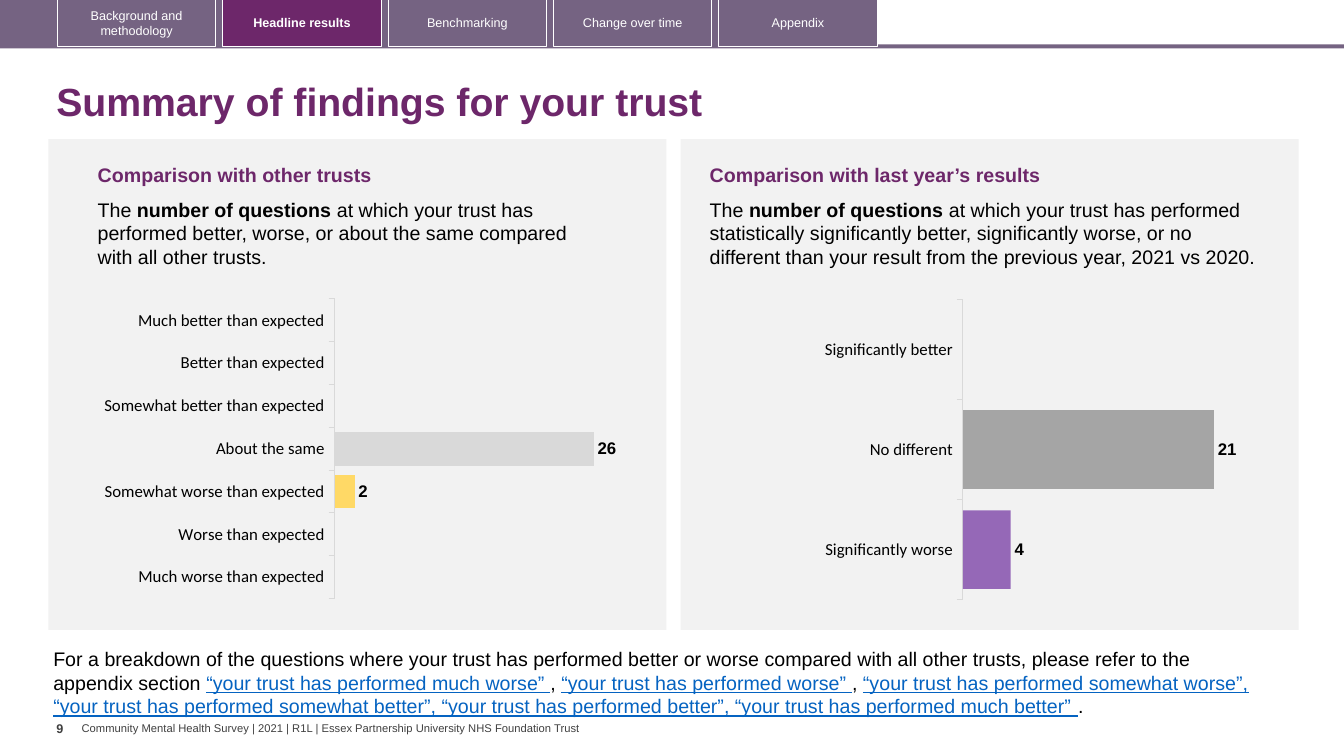
from lxml import etree
from pptx import Presentation
from pptx.chart.data import CategoryChartData
from pptx.dml.color import RGBColor
from pptx.enum.chart import XL_CHART_TYPE, XL_LABEL_POSITION, XL_TICK_MARK
from pptx.enum.shapes import MSO_SHAPE
from pptx.enum.text import MSO_ANCHOR, PP_ALIGN
from pptx.oxml import parse_xml
from pptx.oxml.ns import qn
from pptx.util import Inches, Pt

RECTANGLE = MSO_SHAPE.RECTANGLE
BAR = XL_CHART_TYPE.BAR_CLUSTERED
OUTSIDE_END = XL_LABEL_POSITION.OUTSIDE_END
TICK_OUT = XL_TICK_MARK.OUTSIDE
CENTER, LEFT = PP_ALIGN.CENTER, PP_ALIGN.LEFT
MIDDLE, TOP = MSO_ANCHOR.MIDDLE, MSO_ANCHOR.TOP
CHART_NS = "http://schemas.openxmlformats.org/drawingml/2006/chart"

PURPLE, MAUVE, BLACK, WHITE = "6D276A", "756382", "000000", "FFFFFF"
PANEL_GREY, FOOTER_GREY, AXIS_GREY = "F2F2F2", "404040", "D9D9D9"

TABS = ["Background and methodology", "Headline results", "Benchmarking",
        "Change over time", "Appendix"]
ACTIVE_TAB = "Headline results"
BODY = {"size": 14, "color": BLACK}
STRONG = {**BODY, "bold": True}
LINK = {"size": 14, "color": "0563C1", "underline": True}
HEADING = {"size": 14, "color": PURPLE, "bold": True}
TITLE = {"size": 28, "color": PURPLE, "bold": True}
FOOTER = {"size": 8, "color": FOOTER_GREY}
PAGE_NUMBER = {"size": 9, "color": FOOTER_GREY, "bold": True}

PANELS = [
    {"panel_left": 0.48, "text_left": 0.87, "text_width": 5,
     "chart_at": (0.41, 2.72), "axis_max": 30,
     "heading": "Comparison with other trusts",
     "detail": "at which your trust has performed better, worse, or about the same "
               "compared with all other trusts.",
     "bars": [("Much better than expected", None, "419999"),
              ("Better than expected", None, "5FBD83"),
              ("Somewhat better than expected", None, "A9D18E"),
              ("About the same", 26, "D9D9D9"),
              ("Somewhat worse than expected", 2, "FFD966"),
              ("Worse than expected", None, "F1BE48"),
              ("Much worse than expected", None, "E87722")]},
    {"panel_left": 6.75, "text_left": 6.94, "text_width": 5.65,
     "chart_at": (6.64, 2.73), "axis_max": 25,
     "heading": "Comparison with last year’s results",
     "detail": "at which your trust has performed statistically significantly better, "
               "significantly worse, or no different than your result from the previous "
               "year, 2021 vs 2020.",
     "bars": [("Significantly better", None, "9DC3E6"),
              ("No different", 21, "A5A5A5"),
              ("Significantly worse", 4, "7030A0")]},
]
OPACITY = {"Significantly worse": 71}
PLOT_AREA = {"x": 0.467, "y": 0.072, "w": 0.476, "h": 0.872}

APPENDIX_NOTE = [
    ("For a breakdown of the questions where your trust has performed better or worse "
     "compared with all other trusts, please refer to the appendix section ", BODY),
    ("“your trust has performed much worse” ", LINK),
    (", ", BODY),
    ("“your trust has performed worse” ", LINK),
    (", ", BODY),
    ("“your trust has performed somewhat worse”, “your trust has performed somewhat "
     "better”, “your trust has performed better”, “your trust has performed much "
     "better” ", LINK),
    (".", BODY),
]


def paint(target, color):
    target.solid()
    target.fore_color.rgb = RGBColor.from_string(color)


def style_font(font, size, color, name="Arial", **extras):
    values = {"size": Pt(size), "name": name, **extras}
    for key, value in values.items():
        setattr(font, key, value)
    font.color.rgb = RGBColor.from_string(color)


def write(shape, spans, align=LEFT, anchor=TOP, **frame_values):
    frame = shape.text_frame
    for key, value in {"word_wrap": True, "vertical_anchor": anchor, **frame_values}.items():
        setattr(frame, key, value)
    para = frame.paragraphs[0]
    para.alignment = align
    for text, style in spans:
        span = para.add_run()
        span.text = text
        style_font(span.font, **style)
    return para


def add_text(page, at, spans, **options):
    box = page.shapes.add_textbox(*map(Inches, at))
    return write(box, spans, **options)


def add_block(page, at, fill=None, line=None):
    block = page.shapes.add_shape(RECTANGLE, *map(Inches, at))
    block.shadow.inherit = False
    if fill:
        paint(block.fill, fill)
    else:
        block.fill.background()
    if line:
        paint(block.line.fill, line)
        block.line.width = Pt(0.75)
    else:
        block.line.fill.background()
    return block


def place_plot(chart):
    plot_area = chart.plots[0]._element.getparent()
    for old in plot_area.findall(qn("c:layout")):
        plot_area.remove(old)
    layout = parse_xml(f'<c:layout xmlns:c="{CHART_NS}"><c:manualLayout>'
                       '<c:layoutTarget val="inner"/><c:xMode val="edge"/>'
                       '<c:yMode val="edge"/></c:manualLayout></c:layout>')
    for key, value in PLOT_AREA.items():
        etree.SubElement(layout[0], qn(f"c:{key}")).set("val", str(value))
    plot_area.insert(0, layout)


def add_bar_chart(page, at, bars, axis_max):
    data = CategoryChartData(number_format="0")
    data.categories = [name for name, _, _ in bars]
    data.add_series("Series 1", [value for _, value, _ in bars])
    place = map(Inches, (*at, 6.23, 3.41))
    chart = page.shapes.add_chart(BAR, *place, data).chart
    chart.has_legend = chart.has_title = False
    style_font(chart.font, 10, BLACK, "Calibri")
    place_plot(chart)

    categories, values = chart.category_axis, chart.value_axis
    categories.reverse_order = True
    categories.major_tick_mark = TICK_OUT
    categories.has_major_gridlines = values.has_major_gridlines = False
    style_font(categories.tick_labels.font, 12, BLACK, "Calibri")
    paint(categories.format.line.fill, AXIS_GREY)
    categories.format.line.width = Pt(0.75)
    values.minimum_scale, values.maximum_scale = 0, axis_max
    values.visible = False

    plot = chart.plots[0]
    plot.gap_width = 27
    plot.vary_by_categories = False
    series = plot.series[0]
    series.invert_if_negative = False
    paint(series.format.fill, "4472C4")
    for index, (name, _, color) in enumerate(bars):
        fill = series.points[index].format.fill
        paint(fill, color)
        if name in OPACITY:
            tone = series.points[index].format._element.find(".//" + qn("a:srgbClr")) \
                if hasattr(series.points[index].format, "_element") \
                else series._element.findall(qn("c:dPt"))[index].find(".//" + qn("a:srgbClr"))
            etree.SubElement(tone, qn("a:alpha")).set("val", str(OPACITY[name] * 1000))
    labels = series.data_labels
    for key, value in {"show_value": True, "position": OUTSIDE_END, "number_format": "0",
                       "number_format_is_linked": False}.items():
        setattr(labels, key, value)
    style_font(labels.font, 12, BLACK, bold=True)


def add_navigation(page):
    add_block(page, (0, 0.44, 13.33, 0.04), MAUVE)
    add_block(page, (0, 0, 8.7, 0.47), MAUVE)
    for index, name in enumerate(TABS):
        active = name == ACTIVE_TAB
        tab = add_block(page, (0.57 + 1.64 * index, -0.01, 1.57, 0.47),
                        PURPLE if active else None, WHITE)
        style = {"size": 9, "color": WHITE, "bold": active}
        write(tab, [(name, style)], align=CENTER, anchor=MIDDLE)


def add_panel(page, panel):
    left = panel["text_left"]
    add_block(page, (panel["panel_left"], 1.38, 6.13, 4.87), PANEL_GREY)
    add_text(page, (left, 1.57, 5.52, 0.34), [(panel["heading"], HEADING)])
    add_text(page, (left, 1.91, panel["text_width"], 0.81),
             [("The ", BODY), ("number of questions ", STRONG), (panel["detail"], BODY)])
    add_bar_chart(page, panel["chart_at"], panel["bars"], panel["axis_max"])


def main():
    deck = Presentation()
    deck.slide_width, deck.slide_height = Inches(13.33), Inches(7.5)
    page = deck.slides.add_slide(deck.slide_layouts[6])
    add_navigation(page)
    title = add_text(page, (0.46, 0.67, 12.49, 0.72),
                     [("Summary of findings for your trust", TITLE)], anchor=MIDDLE)
    title.line_spacing = 0.9
    for panel in PANELS:
        add_panel(page, panel)
    add_text(page, (0.43, 6.37, 12.21, 0.81), APPENDIX_NOTE)
    add_text(page, (0.56, 7.1, 0.25, 0.4), [("9", PAGE_NUMBER)],
             margin_left=0, margin_right=0, word_wrap=False)
    add_text(page, (0.81, 7.16, 5.01, 0.13),
             [("Community Mental Health Survey | 2021 | R1L | Essex Partnership University "
               "NHS Foundation Trust", FOOTER)], anchor=MIDDLE, word_wrap=False,
             margin_left=0, margin_right=0, margin_top=0, margin_bottom=0)
    deck.save("out.pptx")


if __name__ == "__main__":
    main()
